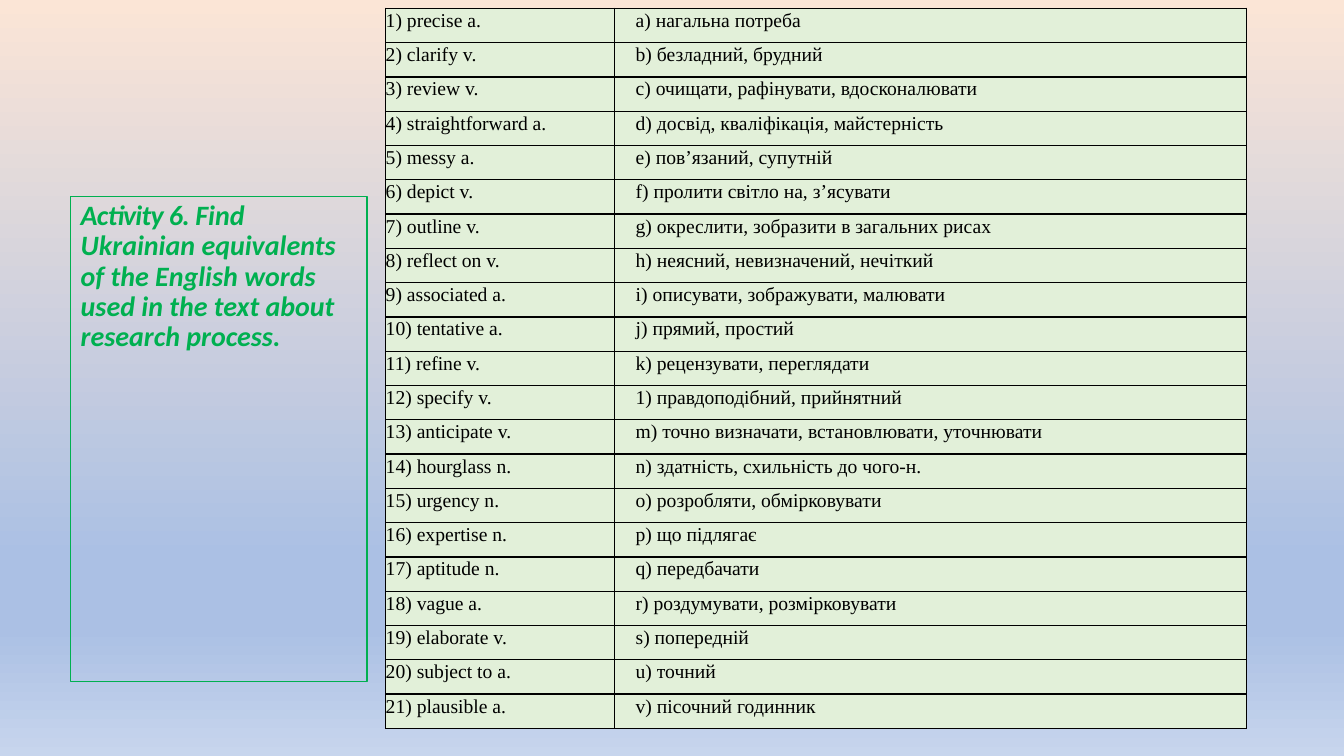
from dataclasses import dataclass

import pptx
import pptx.dml.color
import pptx.enum.text
import pptx.oxml.ns
import pptx.slide
import pptx.table
import pptx.text.text
import pptx.util
from lxml import etree
from pptx.util import Cm


@dataclass(frozen=True)
class Theme:
    heading: str = "00B050"
    text: str = "000000"
    cell: str = "E2F0D9"
    border: str = "000000"
    background: tuple = ((0, "FBE5D6"), (74, "ABC0E4"), (83, "ABC0E4"), (100, "C7D5ED"))
    heading_font: str = "Calibri"
    table_font: str = "Times New Roman"
    heading_size: int = 20
    table_size: int = 14
    space_after: int = 8


@dataclass(frozen=True)
class Entry:
    word: str
    answer: str


@dataclass(frozen=True)
class Column:
    width: float
    indent: float


THEME = Theme()
COLUMNS = (Column(5.77, 0), Column(15.92, 0.53))
ENTRIES = (
    Entry("precise a.", "а) нагальна потреба"),
    Entry("clarify v.", "b) безладний, брудний"),
    Entry("review v.", "с) очищати, рафінувати, вдосконалювати"),
    Entry("straightforward a.", "d) досвід, кваліфікація, майстерність"),
    Entry("messy a.", "е) пов’язаний, супутній"),
    Entry("depict v.", "f) пролити світло на, з’ясувати"),
    Entry("outline v.", "g) окреслити, зобразити в загальних рисах"),
    Entry("reflect on v.", "h) неясний, невизначений, нечіткий"),
    Entry("associated a.", "i) описувати, зображувати, малювати"),
    Entry("tentative a.", "j) прямий, простий"),
    Entry("refine v.", "k) рецензувати, переглядати"),
    Entry("specify v.", "1) правдоподібний, прийнятний"),
    Entry("anticipate v.", "m) точно визначати, встановлювати, уточнювати"),
    Entry("hourglass n.", "n) здатність, схильність до чого-н."),
    Entry("urgency n.", "о) розробляти, обмірковувати"),
    Entry("expertise n.", "р) що підлягає"),
    Entry("aptitude n.", "q) передбачати"),
    Entry("vague a.", "r) роздумувати, розмірковувати"),
    Entry("elaborate v.", "s) попередній"),
    Entry("subject to a.", "u) точний"),
    Entry("plausible a.", "v) пісочний годинник"),
)


def rgb(value: str) -> pptx.dml.color.RGBColor:
    return pptx.dml.color.RGBColor.from_string(value)


def add_child(parent: etree._Element, tag: str, **attributes: str) -> etree._Element:
    return etree.SubElement(parent, pptx.oxml.ns.qn(tag), attributes)


def format_paragraph(p: pptx.text.text._Paragraph, font: str, size: int, color: str,
                     line_spacing: float) -> None:
    p.font.name = font
    p.font.size = pptx.util.Pt(size)
    p.font.color.rgb = rgb(color)
    p.line_spacing = line_spacing
    p.space_before = pptx.util.Pt(0)
    p.space_after = pptx.util.Pt(THEME.space_after)


def paint_background(s: pptx.slide.Slide) -> None:
    fill = s.background.fill
    fill.gradient()
    fill.gradient_angle = 270  # top to bottom
    stops = s.element.xpath(".//p:bg//a:gsLst")[0]
    stops.clear()
    for percent, color in THEME.background:
        stop = add_child(stops, "a:gs", pos=str(percent * 1000))
        add_child(stop, "a:srgbClr", val=color)


def draw_heading(s: pptx.slide.Slide) -> None:
    sp = s.shapes.title
    sp.left, sp.top, sp.width, sp.height = Cm(1.78), Cm(4.95), Cm(7.47), Cm(12.22)
    sp.line.color.rgb = rgb(THEME.heading)
    sp.line.width = pptx.util.Pt(0.75)
    tf = sp.text_frame
    tf.word_wrap = True
    tf.auto_size = pptx.enum.text.MSO_AUTO_SIZE.NONE
    tf.vertical_anchor = pptx.enum.text.MSO_ANCHOR.TOP
    p = tf.paragraphs[0]
    p.alignment = pptx.enum.text.PP_ALIGN.LEFT
    format_paragraph(p, THEME.heading_font, THEME.heading_size, THEME.heading, 0.9)
    p.font.bold = p.font.italic = True
    r = p.add_run()
    r.text = "Activity 6. "
    r.font._element.set("spc", "-50")  # slightly tightened letters
    r = p.add_run()
    r.text = ("Find Ukrainian equivalents of the English words used "
              "in the text about research process.")


def draw_cell(cell: pptx.table._Cell, text: str, indent: float) -> None:
    cell.margin_left = cell.margin_right = cell.margin_top = cell.margin_bottom = 0
    # Borders come before the fill in the cell properties
    for side in ("a:lnL", "a:lnR", "a:lnT", "a:lnB"):
        line = add_child(cell._tc.get_or_add_tcPr(), side, w=str(pptx.util.Pt(1)))
        add_child(add_child(line, "a:solidFill"), "a:srgbClr", val=THEME.border)
    cell.fill.solid()
    cell.fill.fore_color.rgb = rgb(THEME.cell)
    p = cell.text_frame.paragraphs[0]
    p.add_run().text = text
    p.alignment = pptx.enum.text.PP_ALIGN.JUSTIFY
    format_paragraph(p, THEME.table_font, THEME.table_size, THEME.text, 1.07)
    p._p.get_or_add_pPr().set("indent", str(Cm(indent)))


def draw_vocabulary(s: pptx.slide.Slide) -> None:
    width = sum(column.width for column in COLUMNS)
    table = s.shapes.add_table(len(ENTRIES), len(COLUMNS), Cm(9.72), Cm(0.21),
                               Cm(width), Cm(18.15)).table
    table.first_row = table.horz_banding = False
    for i, column in enumerate(COLUMNS):
        table.columns[i].width = Cm(column.width)
    for row, entry in enumerate(ENTRIES):
        texts = (f"{row + 1}) {entry.word}", entry.answer)
        for i, (column, text) in enumerate(zip(COLUMNS, texts)):
            draw_cell(table.cell(row, i), text, column.indent)


def main() -> None:
    prs = pptx.Presentation()
    prs.slide_width, prs.slide_height = Cm(33.87), Cm(19.05)
    s = prs.slides.add_slide(prs.slide_layouts.get_by_name("Title Only"))
    paint_background(s)
    draw_heading(s)
    draw_vocabulary(s)
    prs.save("out.pptx")


if __name__ == "__main__":
    main()
